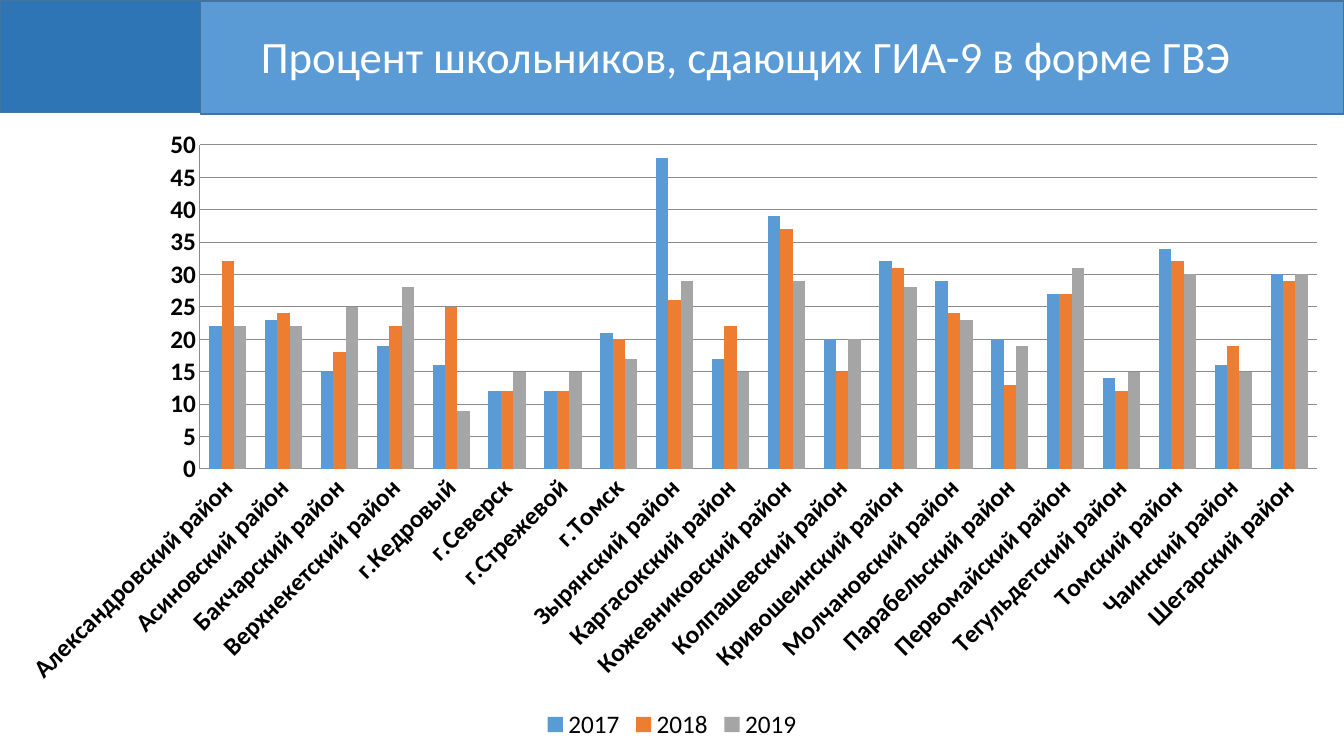
"""Build a slide with a column chart of pupils sitting the GIA-9 exam as GVE."""
from pptx import Presentation
from pptx import util as u
from pptx.chart import data
from pptx.dml import color
from pptx.enum import chart as ce, shapes, text

FONT = "Calibri"
DISTRICTS = [
    ("Александровский район", 22, 32, 22),
    ("Асиновский район", 23, 24, 22),
    ("Бакчарский район", 15, 18, 25),
    ("Верхнекетский район", 19, 22, 28),
    ("г.Кедровый", 16, 25, 9),
    ("г.Северск", 12, 12, 15),
    ("г.Стрежевой", 12, 12, 15),
    ("г.Томск", 21, 20, 17),
    ("Зырянский район", 48, 26, 29),
    ("Каргасокский район", 17, 22, 15),
    ("Кожевниковский район", 39, 37, 29),
    ("Колпашевский район", 20, 15, 20),
    ("Кривошеинский район", 32, 31, 28),
    ("Молчановский район", 29, 24, 23),
    ("Парабельский район", 20, 13, 19),
    ("Первомайский район", 27, 27, 31),
    ("Тегульдетский район", 14, 12, 15),
    ("Томский район", 34, 32, 30),
    ("Чаинский район", 16, 19, 15),
    ("Шегарский район", 30, 29, 30),
]
YEARS = {"2017": "5B9BD5", "2018": "ED7D31", "2019": "A5A5A5"}


def paint(fmt, hex_color):
    fmt.solid()
    fmt.fore_color.rgb = color.RGBColor.from_string(hex_color)


def set_font(font, size, hex_color, bold=False):
    font.name = FONT
    font.size = u.Pt(size)
    font.bold = bold
    paint(font.fill, hex_color)


prs = Presentation()
prs.slide_width, prs.slide_height = u.Cm(33.87), u.Cm(19.05)
s = prs.slides.add_slide(prs.slide_layouts[5])

names, *columns = zip(*DISTRICTS)
cd = data.CategoryChartData(number_format="0")
cd.categories = names
for year, values in zip(YEARS, columns):
    cd.add_series(year, values)
chart = s.shapes.add_chart(ce.XL_CHART_TYPE.COLUMN_CLUSTERED, 0, u.Cm(2.95),
                           prs.slide_width, u.Cm(15.82), cd).chart
chart.has_title = False
set_font(chart.font, 18, "000000")

plot = chart.plots[0]
plot.gap_width = 150
plot.overlap = 0
plot.vary_by_categories = False
for series, fill in zip(plot.series, YEARS.values()):
    paint(series.format.fill, fill)
    series.invert_if_negative = False

chart.has_legend = True
chart.legend.position = ce.XL_LEGEND_POSITION.BOTTOM
chart.legend.include_in_layout = False
set_font(chart.legend.font, 18, "000000")

value_axis = chart.value_axis
value_axis.minimum_scale = 0
value_axis.maximum_scale = 50
value_axis.major_unit = 5
value_axis.has_major_gridlines = True
value_axis.tick_labels.number_format = "0"
value_axis.tick_labels.number_format_is_linked = False
for axis in (chart.category_axis, value_axis):
    axis.major_tick_mark = ce.XL_TICK_MARK.NONE
    axis.minor_tick_mark = ce.XL_TICK_MARK.NONE
    set_font(axis.tick_labels.font, 18, "000000", bold=True)
for part in (chart.category_axis, value_axis, value_axis.major_gridlines):
    paint(part.format.line.fill, "8C8C8C")
    part.format.line.width = u.Pt(0.5)
chart.element.xpath(".//c:catAx/c:txPr/a:bodyPr")[0].set("rot", "-2700000")

for left, top, width, height, fill in [(5.05, 0.03, 28.82, 2.84, "5B9BD5"),
                                       (0, 0, 5.05, 2.84, "2E75B6")]:
    sp = s.shapes.add_shape(shapes.MSO_SHAPE.RECTANGLE, u.Cm(left), u.Cm(top),
                            u.Cm(width), u.Cm(height))
    sp.shadow.inherit = False
    paint(sp.fill, fill)
    paint(sp.line.fill, "43739E")
    sp.line.width = u.Pt(1)

title = s.shapes.title
sp.element.addnext(title.element)
title.left, title.top = u.Cm(6.32), u.Cm(0.74)
title.width, title.height = u.Cm(26.92), u.Cm(1.5)
tf = title.text_frame
tf.text = "Процент школьников, сдающих ГИА-9 в форме ГВЭ"
tf.word_wrap = True
tf.auto_size = text.MSO_AUTO_SIZE.NONE
tf.vertical_anchor = text.MSO_ANCHOR.MIDDLE
p = tf.paragraphs[0]
p.alignment = text.PP_ALIGN.LEFT
p.line_spacing = 0.9
set_font(p.font, 32, "FFFFFF")

prs.save("out.pptx")
